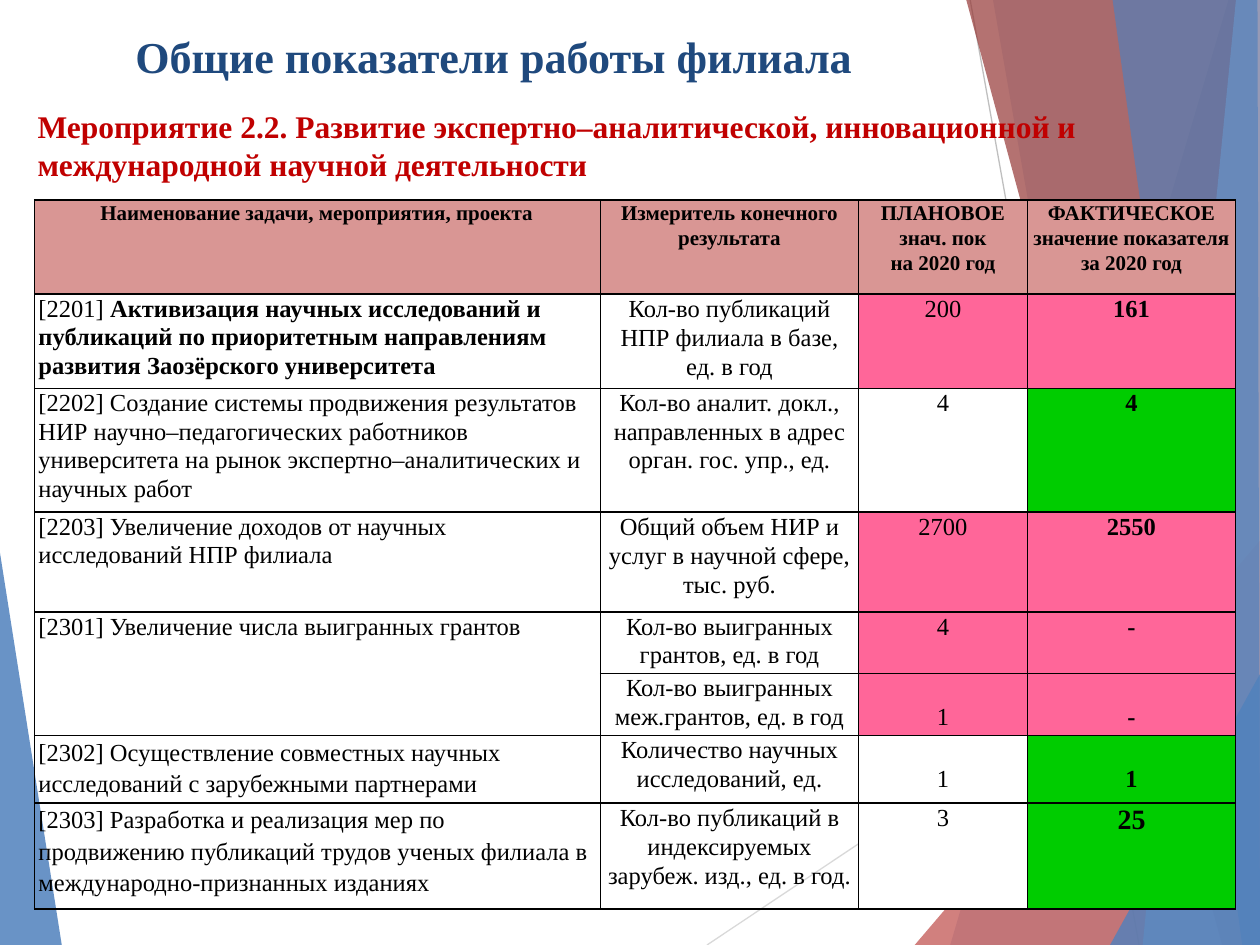
from dataclasses import dataclass

from lxml.etree import SubElement
from pptx import Presentation
from pptx.dml.color import RGBColor
from pptx.enum.shapes import MSO_CONNECTOR
from pptx.enum.text import MSO_ANCHOR, PP_ALIGN
from pptx.oxml.ns import qn
from pptx.util import Pt


@dataclass(frozen=True)
class Theme:
    font: str = "Times New Roman"
    title: str = "1F497D"
    subtitle: str = "C00000"
    text: str = "000000"
    header: str = "D99694"
    missed: str = "FF6699"
    reached: str = "00CC00"
    plain: str = "FFFFFF"
    blue: str = "4F81BD"
    pale_blue: str = "95B3D7"
    red: str = "C0504D"
    dark_red: str = "953735"
    light_line: str = "D9D9D9"
    grey_line: str = "BFBFBF"
    title_size: float = 25.2
    subtitle_size: float = 18
    header_size: float = 12
    body_size: float = 14
    accent_size: float = 16


THEME = Theme()
WIDTH, HEIGHT = 720, 540

# Points, colour, opacity in percent
FACETS = [
    ([(702, 0), (543, HEIGHT), (WIDTH, HEIGHT), (WIDTH, 0)], THEME.blue, 30),
    ([(567.4, 0), (661.7, HEIGHT), (WIDTH, HEIGHT), (WIDTH, 0)], THEME.blue, 20),
    ([(522.7, HEIGHT), (WIDTH, 308.9), (WIDTH, HEIGHT)], THEME.red, 72),
    ([(552.2, 0), (698.4, HEIGHT), (WIDTH, HEIGHT), (WIDTH, 0)], THEME.dark_red, 70),
    ([(706.3, 0), (653, HEIGHT), (WIDTH, HEIGHT), (WIDTH, 0)], THEME.pale_blue, 70),
    ([(635.8, 0), (709.9, HEIGHT), (WIDTH, HEIGHT), (718.6, 0)], THEME.blue, 65),
    ([(634.3, HEIGHT), (WIDTH, 385.2), (WIDTH, HEIGHT)], THEME.blue, 80),
]

COLUMN_WIDTHS = [323.4, 147.4, 96.6, 118.9]
ROW_HEIGHTS = [53.7, 53.7, 70.3, 57.1, 35.2, 35.2, 38.3, 60.5]
HEADERS = [
    "Наименование задачи, мероприятия, проекта",
    "Измеритель конечного результата",
    "ПЛАНОВОЕ\nзнач. пок\nна 2020 год",
    "ФАКТИЧЕСКОЕ\nзначение показателя\nза 2020 год",
]
# Code, task, measure, plan, fact, plan fill, fact fill
ROWS = [
    ("[2201]", "Активизация научных исследований и публикаций по приоритетным "
     "направлениям развития Заозёрского университета",
     "Кол-во публикаций НПР филиала в базе, ед. в год",
     "200", "161", THEME.missed, THEME.missed),
    ("[2202]", "Создание системы продвижения результатов НИР научно–педагогических "
     "работников университета на рынок экспертно–аналитических и научных работ",
     "Кол-во аналит. докл., направленных в адрес орган. гос. упр., ед.",
     "4", "4", THEME.plain, THEME.reached),
    ("[2203]", "Увеличение доходов от научных исследований НПР филиала",
     "Общий объем НИР и услуг в научной сфере, тыс. руб.",
     "2700", "2550", THEME.missed, THEME.missed),
    ("[2301]", "Увеличение числа выигранных грантов",
     "Кол-во выигранных грантов, ед. в год", "4", "-", THEME.missed, THEME.missed),
    (None, None, "Кол-во выигранных меж.грантов, ед. в год",
     "1", "-", THEME.missed, THEME.missed),
    ("[2302]", "Осуществление совместных научных исследований с зарубежными партнерами",
     "Количество научных исследований, ед.", "1", "1", THEME.plain, THEME.reached),
    ("[2303]", "Разработка и реализация мер по продвижению публикаций трудов ученых "
     "филиала в международно-признанных изданиях",
     "Кол-во публикаций в индексируемых зарубеж. изд., ед. в год.",
     "3", "25", THEME.plain, THEME.reached),
]
LOOSE_MEASURES = {1, 3, 7}
WIDE_TASKS = {6, 7}
LOWERED_VALUES = {5, 6}


class SlideBuilder:
    def __init__(self, slide, theme):
        self.slide = slide
        self.theme = theme

    def facet(self, points, color, opacity):
        corners = [(Pt(x), Pt(y)) for x, y in points]
        builder = self.slide.shapes.build_freeform(*corners[0], scale=1.0)
        builder.add_line_segments(corners[1:], close=True)
        shape = builder.convert_to_shape()
        shape.shadow.inherit = False
        shape.line.fill.background()
        shape.fill.solid()
        shape.fill.fore_color.rgb = RGBColor.from_string(color)
        fill_color = shape.fill._xPr.find(qn("a:solidFill"))[0]
        SubElement(fill_color, qn("a:alpha"), val=str(opacity * 1000))

    def line(self, start, end, color):
        connector = self.slide.shapes.add_connector(
            MSO_CONNECTOR.STRAIGHT, *map(Pt, start + end))
        connector.line.color.rgb = RGBColor.from_string(color)
        connector.line.width = Pt(0.75)
        SubElement(connector._element.spPr, qn("a:effectLst"))

    def style_run(self, run, size, color, bold):
        run.font.name = self.theme.font
        run.font.size = Pt(size)
        run.font.bold = bold
        run.font.color.rgb = RGBColor.from_string(color)

    def text(self, box, text, size, color, alignment, anchor):
        shape = self.slide.shapes.add_textbox(*map(Pt, box))
        frame = shape.text_frame
        frame.word_wrap = True
        frame.vertical_anchor = anchor
        frame.text = text
        frame.paragraphs[0].alignment = alignment
        self.style_run(frame.paragraphs[0].runs[0], size, color, True)

    def table(self, left, top, widths, heights):
        frame = self.slide.shapes.add_table(
            len(heights), len(widths), Pt(left), Pt(top), Pt(sum(widths)), Pt(sum(heights)))
        table = frame.table
        table.first_row = table.horz_banding = False
        for column, width in zip(table.columns, widths):
            column.width = Pt(width)
        for row, height in zip(table.rows, heights):
            row.height = Pt(height)
        for cell in table.iter_cells():
            cell.margin_left = cell.margin_right = Pt(2.16)
            cell.margin_top = cell.margin_bottom = 0
            cell.fill.background()
            self.border(cell)
        return table

    def border(self, cell):
        properties = cell._tc.get_or_add_tcPr()
        for position, side in enumerate(("a:lnL", "a:lnR", "a:lnT", "a:lnB")):
            edge = SubElement(properties, qn(side), w=str(Pt(1)))
            fill = SubElement(edge, qn("a:solidFill"))
            SubElement(fill, qn("a:srgbClr"), val=self.theme.text)
            properties.insert(position, edge)

    def cell(self, cell, text, size, bold=False, fill=None,
             alignment=PP_ALIGN.CENTER, spacing=1.05):
        cell.text_frame.text = text
        if fill:
            cell.fill.solid()
            cell.fill.fore_color.rgb = RGBColor.from_string(fill)
        for paragraph in cell.text_frame.paragraphs:
            paragraph.alignment = alignment
            paragraph.line_spacing = spacing
            for run in paragraph.runs:
                self.style_run(run, size, self.theme.text, bold)


def fill_table(builder, table):
    theme = builder.theme
    for column, header in enumerate(HEADERS):
        builder.cell(table.cell(0, column), header, theme.header_size, True,
                     theme.header, spacing=1.07)
    first_header = table.cell(0, 0).text_frame.paragraphs[0]
    first_header.alignment = PP_ALIGN.JUSTIFY
    first_header._p.get_or_add_pPr().set("indent", str(Pt(35.4)))

    table.cell(4, 0).merge(table.cell(5, 0))
    for row, (code, task, measure, plan, fact, plan_fill, fact_fill) in enumerate(ROWS, 1):
        if code:
            task_cell = table.cell(row, 0)
            builder.cell(task_cell, f"{code} ", theme.body_size, alignment=PP_ALIGN.LEFT,
                         spacing=1.15 if row in WIDE_TASKS else 1.05)
            run = task_cell.text_frame.paragraphs[0].add_run()
            run.text = task
            builder.style_run(run, theme.body_size, theme.text, row == 1)
        builder.cell(table.cell(row, 1), measure, theme.body_size,
                     spacing=1.07 if row in LOOSE_MEASURES else 1.05)
        fact_size = theme.accent_size if row == len(ROWS) else theme.body_size
        builder.cell(table.cell(row, 2), plan, theme.body_size, fill=plan_fill)
        builder.cell(table.cell(row, 3), fact, fact_size, True, fact_fill)
        if row in LOWERED_VALUES:
            for column in (2, 3):
                table.cell(row, column).margin_top = Pt(16.5)


def main():
    presentation = Presentation()
    presentation.slide_width, presentation.slide_height = Pt(WIDTH), Pt(HEIGHT)
    slide = presentation.slides.add_slide(presentation.slide_layouts[6])
    builder = SlideBuilder(slide, THEME)

    builder.facet([(0, 316), (35.3, HEIGHT), (0, HEIGHT)], THEME.blue, 85)
    builder.line((404, HEIGHT), (WIDTH, 329), THEME.light_line)
    builder.line((554.4, 0), (650.9, HEIGHT), THEME.grey_line)
    for facet in FACETS:
        builder.facet(*facet)

    builder.text((32.4, 12.2, 499.7, 39.6), "Общие показатели работы филиала",
                 THEME.title_size, THEME.title, PP_ALIGN.CENTER, MSO_ANCHOR.MIDDLE)
    builder.text((14.4, 57.6, 640.8, 51.1),
                 "Мероприятие 2.2. Развитие экспертно–аналитической, инновационной "
                 "и международной научной деятельности",
                 THEME.subtitle_size, THEME.subtitle, PP_ALIGN.LEFT, MSO_ANCHOR.TOP)
    fill_table(builder, builder.table(19.8, 114.4, COLUMN_WIDTHS, ROW_HEIGHTS))
    presentation.save("out.pptx")


if __name__ == "__main__":
    main()
